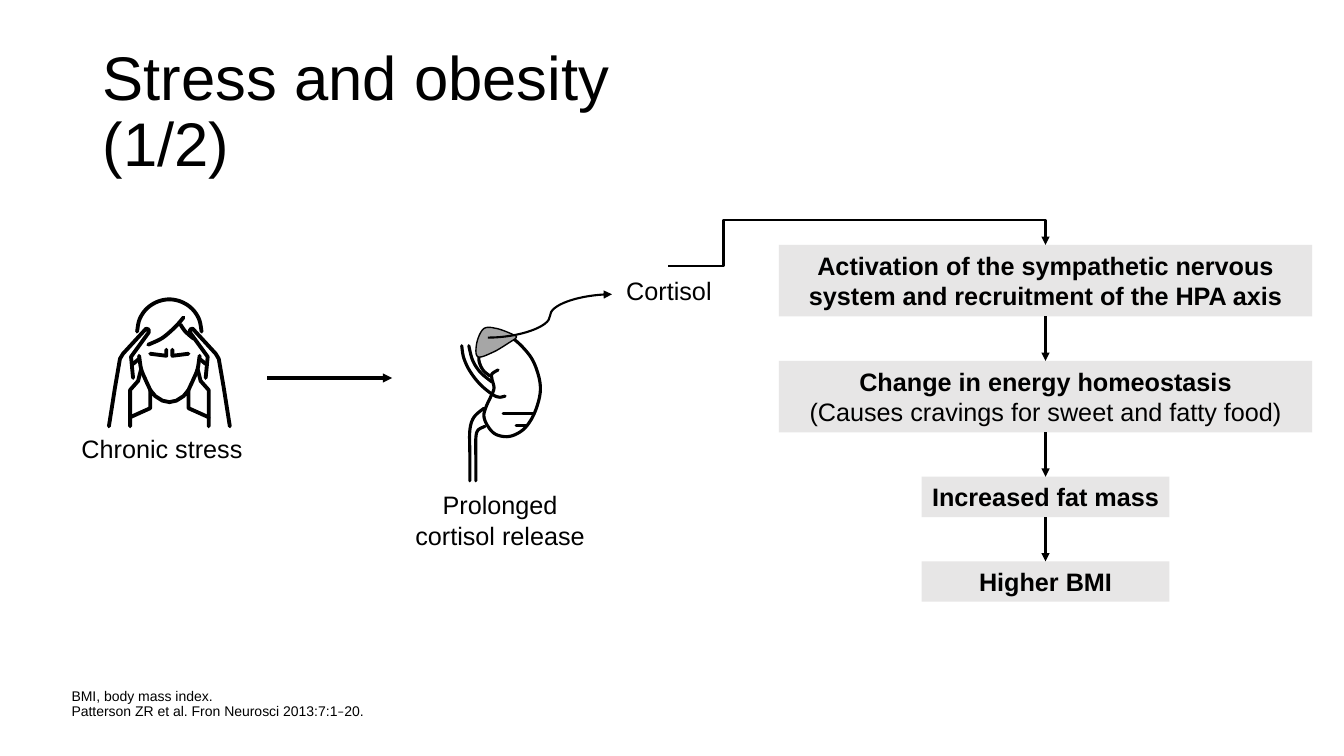
from itertools import pairwise

from lxml.etree import SubElement
from pptx import Presentation
from pptx.dml.color import RGBColor
from pptx.enum.shapes import MSO_CONNECTOR as Connector, MSO_SHAPE as Shape
from pptx.enum.text import MSO_ANCHOR as Anchor, PP_ALIGN as Align
from pptx.oxml.ns import qn
from pptx.util import Inches, Pt

BLACK = RGBColor(0x00, 0x00, 0x00)
PALE_GREY = RGBColor(0xE7, 0xE6, 0xE6)
GLAND_GREY = RGBColor(0xA6, 0xA6, 0xA6)

HEAD_AXIS = 16.8
HAIR = [(13.6, 32.9), (13.85, 31.67), (14.54, 30.64), (15.58, 29.95), (16.8, 29.7),
        (18.02, 29.95), (19.06, 30.64), (19.75, 31.67), (20, 32.9)]
FRINGES = [
    [(14.7, 34.2), (16, 33.6), (17, 32.8), (17.7, 32.1), (18.2, 31.5)],
    [(17.9, 32.2), (18.4, 32.9), (19.2, 33.6)],
]
COLLAR = [(12.9, 41.4), (14.9, 40.5), (14.9, 38.7), (15.4, 39.3), (16.1, 39.75),
          (16.8, 39.9), (17.5, 39.75), (18.2, 39.3), (18.7, 38.7), (18.7, 40.5), (20.7, 41.4)]
CHEEK = [(13.8, 35.3), (14, 36.6), (14.4, 37.6), (15, 38.9)]
HEAD_SIDE = [
    [(10.8, 42.3), (11.4, 38.5), (11.9, 35.6), (12.2, 35.1), (14.5, 32.6), (14.75, 32.7),
     (14.75, 33), (13, 35.4), (13.2, 37.5)],
    [(12.9, 42.3), (12.9, 38.7), (13.7, 37.8), (14, 36.6)],
    [(13.2, 36.1), (13.8, 35.6)],
    [(14.9, 35.1), (16.5, 35.3), (16.5, 34.7)],
]

KIDNEY_CURVES = [
    [(48.6, 37.3), (47.9, 36.7), (47.5, 35.7), (47.7, 34.7), (48.3, 33.8), (49.3, 33.3),
     (50.4, 33.4), (51.4, 34), (52.7, 35.5), (53.4, 37.2), (53.6, 38.7), (53.3, 40.2),
     (52.7, 41.6), (51.8, 42.7), (50.5, 43.3), (49.2, 43.1), (48.4, 42.3), (48, 41.3),
     (48.2, 40.4), (48.7, 39.3), (49, 38.5), (48.8, 37.6), (48.8, 37.1), (49.4, 36.7)],
    [(45.8, 34.3), (46, 35.5), (46.6, 36.8), (47.6, 38.1), (48.8, 39.1), (49.5, 39.4), (50.1, 39.3)],
    [(46.5, 34.3), (46.9, 35.8), (47.7, 37), (48.8, 37.9)],
    [(46.6, 47.7), (46.6, 45), (46.6, 42.7), (47, 41.4), (48, 40.5)],
    [(47.2, 47.7), (47.2, 45.5), (47.2, 43.5), (47.4, 42.7), (48.1, 42.3)],
]
KIDNEY_LINES = [[(49.9, 41), (53, 41)], [(51.2, 42.2), (52.2, 42.2)]]
GLAND = [(50.5, 34), (49, 34.9), (47.4, 35.4), (47.3, 34), (48, 32.6), (49.3, 32.6),
         (50.9, 33.2), (51.2, 33.5), (50.5, 34)]


def mirrored(points):
    return [(2 * HEAD_AXIS - x, y) for x, y in points]


def smoothed(points, steps=6):
    ends = [points[0], *points, points[-1]]
    curve = [points[0]]
    for a, b, c, d in zip(ends, ends[1:], ends[2:], ends[3:]):
        for step in range(1, steps + 1):
            t = step / steps
            curve.append(tuple(
                (2 * q + (r - p) * t + (2 * p - 5 * q + 4 * r - s) * t ** 2
                 + (3 * q - p - 3 * r + s) * t ** 3) / 2
                for p, q, r, s in zip(a, b, c, d)))
    return curve


class SlideBuilder:
    font = "Arial"
    ink = BLACK
    body_size = 18
    cell = Inches(0.1)

    def __init__(self, slide):
        self.shapes = slide.shapes

    def grid(self, *lengths):
        return [round(length * self.cell) for length in lengths]

    def fill_text(self, shape, lines, size, align, bold_lines=0):
        frame = shape.text_frame
        frame.word_wrap = True
        for index, line in enumerate(lines):
            paragraph = frame.paragraphs[0] if index == 0 else frame.add_paragraph()
            paragraph.text = line
            paragraph.alignment = align
            paragraph.font.name = self.font
            paragraph.font.size = Pt(size)
            paragraph.font.color.rgb = self.ink
            paragraph.font.bold = index < bold_lines
        return frame

    def text(self, area, line, size=body_size, align=Align.CENTER, anchor=Anchor.TOP):
        frame = self.fill_text(self.shapes.add_textbox(*self.grid(*area)), [line], size, align)
        frame.vertical_anchor = anchor
        return frame

    def box(self, area, lines):
        shape = self.shapes.add_shape(Shape.RECTANGLE, *self.grid(*area))
        shape.shadow.inherit = False
        shape.fill.solid()
        shape.fill.fore_color.rgb = PALE_GREY
        shape.line.fill.background()
        self.fill_text(shape, lines, self.body_size, Align.CENTER, bold_lines=1)
        return shape

    def stroke(self, points, width, fill=None):
        corners = [self.grid(*point) for point in points]
        builder = self.shapes.build_freeform(*corners[0])
        builder.add_line_segments(corners[1:], close=fill is not None)
        shape = builder.convert_to_shape()
        shape.shadow.inherit = False
        if fill is None:
            shape.fill.background()
        else:
            shape.fill.solid()
            shape.fill.fore_color.rgb = fill
        shape.line.color.rgb = self.ink
        shape.line.width = Pt(width)
        outline = shape._element.spPr.find(qn("a:ln"))
        outline.set("cap", "rnd")
        SubElement(outline, qn("a:round"))

    def arrow(self, start, end, width=1.5, kind=Connector.STRAIGHT):
        connector = self.shapes.add_connector(kind, *self.grid(*start, *end))
        connector.line.color.rgb = self.ink
        connector.line.width = Pt(width)
        properties = connector._element.spPr
        SubElement(properties.find(qn("a:ln")), qn("a:tailEnd"), type="triangle")
        SubElement(properties, qn("a:effectLst"))
        return connector

    def reshape(self, connector, preset, adjustments):
        geometry = connector._element.spPr.find(qn("a:prstGeom"))
        geometry.set("prst", preset)
        guides = geometry.find(qn("a:avLst"))
        if guides is None:
            guides = SubElement(geometry, qn("a:avLst"))
        for number, value in enumerate(adjustments, 1):
            SubElement(guides, qn("a:gd"), name=f"adj{number}", fmla=f"val {value}")


def draw_kidney(builder):
    for points in KIDNEY_CURVES:
        builder.stroke(smoothed(points), 2.25)
    for points in KIDNEY_LINES:
        builder.stroke(points, 2.25)
    builder.stroke(smoothed(GLAND), 1, GLAND_GREY)


def draw_head(builder):
    for points in [HAIR, *FRINGES, CHEEK, mirrored(CHEEK)]:
        builder.stroke(smoothed(points), 2.75)
    builder.stroke(COLLAR, 2.75)
    for points in HEAD_SIDE:
        builder.stroke(points, 2.75)
        builder.stroke(mirrored(points), 2.75)


def draw_effects(builder):
    center, top, gap = 103.7, 24.3, 4.4
    effects = [
        (52.9, 7.1, ["Activation of the sympathetic nervous system and recruitment of the HPA axis"]),
        (52.9, 7.1, ["Change in energy homeostasis", "(Causes cravings for sweet and fatty food)"]),
        (24.6, 4, ["Increased fat mass"]),
        (24.6, 4, ["Higher BMI"]),
    ]
    boxes = []
    for width, height, lines in effects:
        boxes.append(builder.box((center - width / 2, top, width, height), lines))
        top += height + gap
    for upper, lower in pairwise(boxes):
        arrow = builder.arrow((center, 0), (center, 1))
        arrow.begin_connect(upper, 2)
        arrow.end_connect(lower, 0)
    elbow = builder.arrow((66.3, 26.4), (center, 24.3), kind=Connector.ELBOW)
    elbow.end_connect(boxes[0], 0)
    builder.reshape(elbow, "bentConnector4", [14600, 217200])


def main():
    presentation = Presentation()
    presentation.slide_width, presentation.slide_height = Inches(13.33), Inches(7.5)
    builder = SlideBuilder(presentation.slides.add_slide(presentation.slide_layouts[6]))

    draw_kidney(builder)
    title = builder.text((9.2, 4, 115, 14.5), "Stress and obesity\v(1/2)", 44, Align.LEFT, Anchor.MIDDLE)
    footer = builder.text((7.1, 67.9, 94.6, 3.5),
                          "BMI, body mass index.\vPatterson ZR et al. Fron Neurosci 2013:7:1",
                          10, Align.LEFT, Anchor.BOTTOM)
    footer.margin_left = footer.margin_right = footer.margin_top = footer.margin_bottom = 0
    for frame in (title, footer):
        frame.paragraphs[0].line_spacing = 0.9
    for ending, font in (("–", "Calibri"), ("20.", builder.font)):
        run = footer.paragraphs[0].add_run()
        run.text = ending
        run.font.name = font

    builder.text((7.1, 42.5, 19.4, 4), "Chronic stress", align=Align.LEFT)
    builder.text((40.1, 48.1, 19, 7.1), "Prolonged cortisol release")
    builder.text((59.2, 26.8, 14.3, 4), "Cortisol")
    draw_effects(builder)
    builder.arrow((48.4, 33.5), (60.7, 29.2), kind=Connector.CURVE)
    builder.arrow((26.5, 37.5), (38.9, 37.5), 2.25)
    draw_head(builder)
    presentation.save("out.pptx")


if __name__ == "__main__":
    main()
